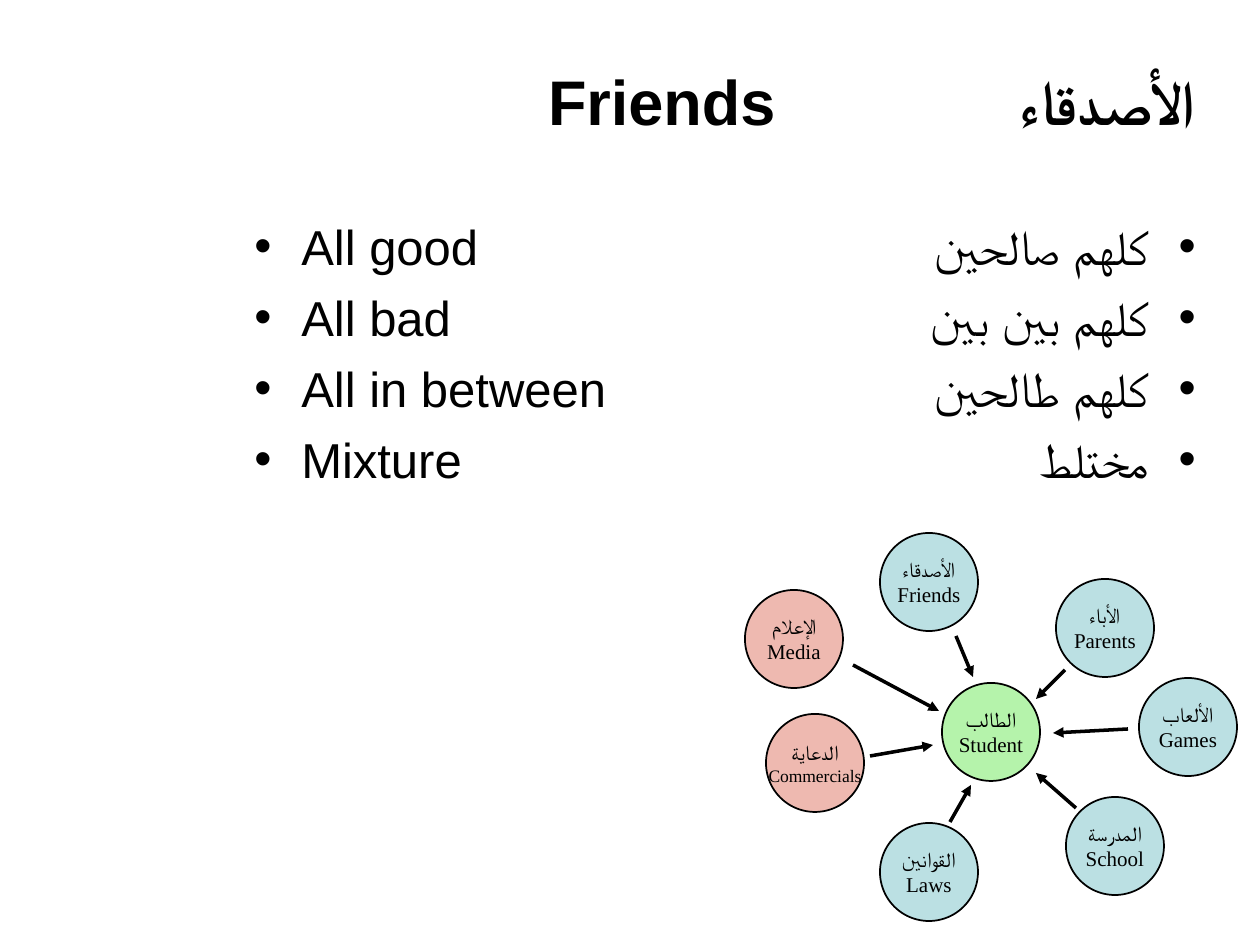
from lxml import etree
from pptx import Presentation
from pptx import util as u
from pptx.dml.color import RGBColor
from pptx.enum import shapes, text
from pptx.oxml.ns import qn

SCALE = 914400 / 126
COLORS = {"ink": "000000", "student": "B5F3AB", "good": "BBE0E3", "risky": "EEB9B0"}
TITLE = "الأصدقاء\t\t\t\tFriends "
ENGLISH = ["All good", "All bad", "All in between", "Mixture"]
ARABIC = ["كلهم صالحين", "كلهم بين بين", "كلهم طالحين", "مختلط"]
DIAMETER = 98
CIRCLES = [
    ("الطالب", "Student", 942, 683, "student", 12),
    ("الأباء", "Parents", 1056, 579, "good", 12),
    ("الدعاية", "Commercials", 766, 714, "risky", 10),
    ("القوانين", "Laws", 880, 823, "good", 12),
    ("المدرسة", "School", 1066, 797, "good", 12),
    ("الإعلام", "Media", 745, 590, "risky", 12),
    ("الأصدقاء", "Friends", 880, 533, "good", 12),
    ("الألعاب", "Games", 1139, 678, "good", 12),
]
ARROWS = [
    (956, 636, 973, 677),
    (870, 756, 933, 745),
    (853, 665, 939, 711),
    (1076, 808, 1036, 773),
    (950, 822, 971, 785),
    (1065, 670, 1036, 699),
    (1128, 729, 1053, 733),
]


def px(*lengths):
    return [u.Emu(round(length * SCALE)) for length in lengths]


def color(name):
    return RGBColor.from_string(COLORS[name])


def style(para, font, size, bold=False):
    for span in para.runs:
        span.font.name = font
        span.font.size = u.Pt(size)
        span.font.bold = bold
        span.font.color.rgb = color("ink")
        etree.SubElement(span.font._element, qn("a:cs"), typeface=font)


def set_rtl(para):
    para.alignment = text.PP_ALIGN.RIGHT
    para._p.get_or_add_pPr().set("rtl", "1")


def add_title(page):
    box = page.shapes.add_textbox(*px(242, 42, 966, 116))
    frame = box.text_frame
    frame.word_wrap = True
    frame.vertical_anchor = text.MSO_ANCHOR.MIDDLE
    para = frame.paragraphs[0]
    para.text = TITLE
    set_rtl(para)
    para._p.get_or_add_pPr().set("defTabSz", "762000")
    style(para, "Arial", 36, True)


def add_bullets(page, lines, left, rtl):
    box = page.shapes.add_textbox(*px(left, 210, 473, 630))
    frame = box.text_frame
    frame.word_wrap = True
    frame.text = "\n".join(lines)
    indent = px(47)[0]
    for index, para in enumerate(frame.paragraphs):
        if rtl:
            set_rtl(para)
        props = para._p.get_or_add_pPr()
        props.set("marL", str(indent))
        props.set("indent", str(-indent))
        if index:
            para.space_before = u.Pt(7)
        etree.SubElement(props, qn("a:buFont"), typeface="Arial")
        etree.SubElement(props, qn("a:buChar"), char="•")
        style(para, "Arial", 28)


def add_circle(group, arabic, english, left, top, fill, size):
    circle = group.shapes.add_shape(
        shapes.MSO_SHAPE.OVAL, *px(left, top, DIAMETER, DIAMETER))
    circle.shadow.inherit = False
    circle.fill.solid()
    circle.fill.fore_color.rgb = color(fill)
    circle.line.color.rgb = color("ink")
    circle.line.width = u.Pt(1)
    frame = circle.text_frame
    frame.word_wrap = False
    frame.vertical_anchor = text.MSO_ANCHOR.MIDDLE
    frame.text = f"{arabic}\n{english}"
    for para, points in zip(frame.paragraphs, (12, size)):
        para.alignment = text.PP_ALIGN.CENTER
        style(para, "Times New Roman", points)


def add_arrow(group, ends):
    arrow = group.shapes.add_connector(shapes.MSO_CONNECTOR.STRAIGHT, *px(*ends))
    arrow.line.color.rgb = color("ink")
    arrow.line.width = u.Pt(2)
    etree.SubElement(arrow.line._get_or_add_ln(), qn("a:tailEnd"), type="triangle")
    etree.SubElement(arrow._element.spPr, qn("a:effectLst"))


def main():
    deck = Presentation()
    deck.slide_width, deck.slide_height = px(1260, 945)
    page = deck.slides.add_slide(deck.slide_layouts[6])
    add_title(page)
    add_bullets(page, ENGLISH, 242, False)
    add_bullets(page, ARABIC, 735, True)
    diagram = page.shapes.add_group_shape()
    for circle in CIRCLES:
        add_circle(diagram, *circle)
    for ends in ARROWS:
        add_arrow(diagram, ends)
    deck.save("out.pptx")


if __name__ == "__main__":
    main()
